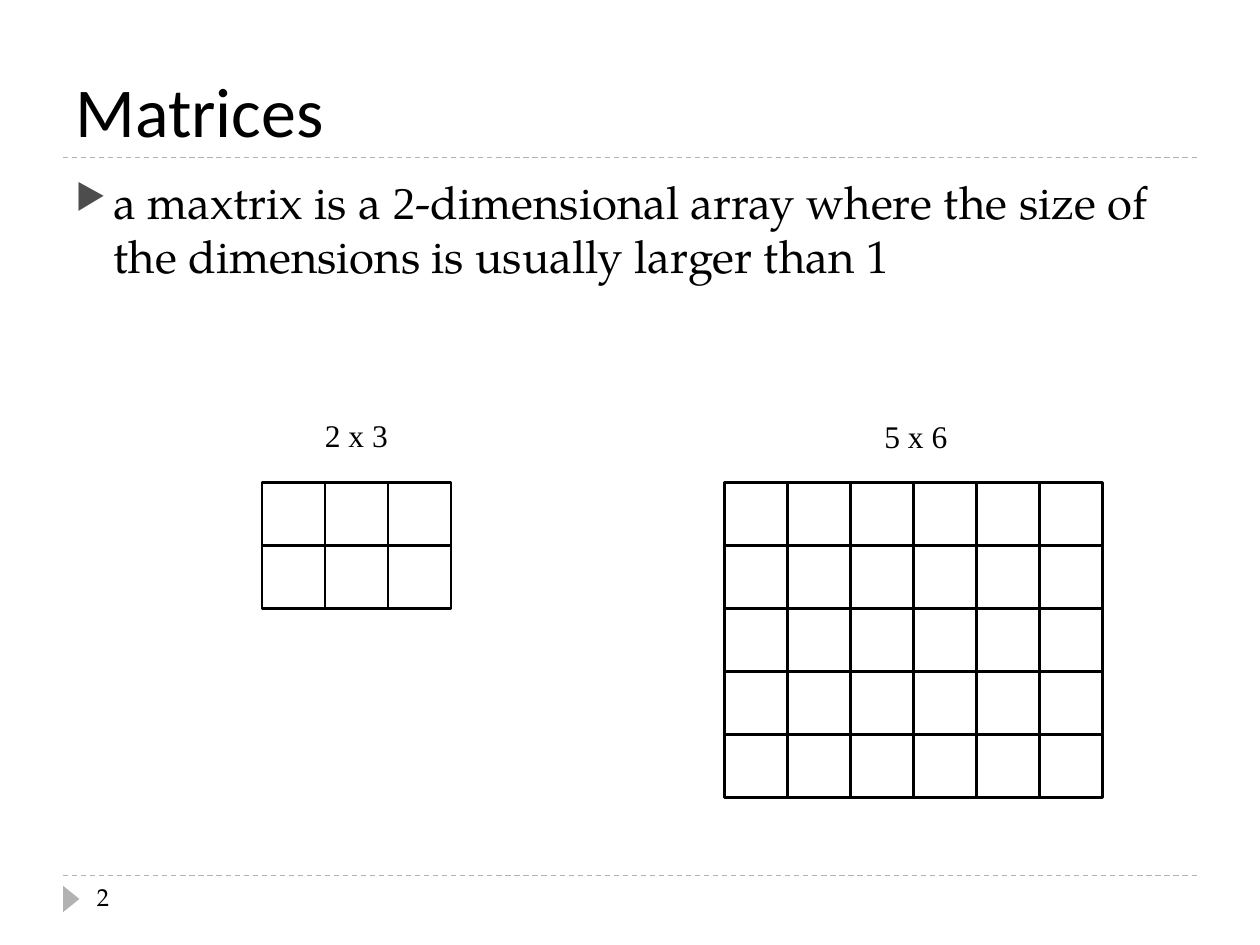
from dataclasses import dataclass

from lxml.etree import SubElement
from pptx import Presentation
from pptx.dml.color import RGBColor
from pptx.enum.dml import MSO_LINE
from pptx.enum.shapes import MSO_CONNECTOR, MSO_SHAPE
from pptx.enum.text import MSO_ANCHOR, PP_ALIGN
from pptx.oxml.ns import qn
from pptx.util import Inches, Pt


@dataclass(frozen=True)
class Theme:
    ink: str = "000000"
    paper: str = "FFFFFF"
    rule: str = "B2B2B2"
    bullet: str = "4D4D4D"
    title_font: str = "Calibri"
    body_font: str = "TeX Gyre Pagella"
    label_font: str = "Times New Roman"
    title_size: int = 40
    body_size: int = 26
    label_size: int = 18
    number_size: int = 14


class SlideBuilder:
    def __init__(self, slide, theme):
        self.slide = slide
        self.theme = theme

    def add_run(self, paragraph, text, font, size):
        run = paragraph.add_run()
        run.text = text
        run.font.name = font
        run.font.size = Pt(size)
        run.font.color.rgb = RGBColor.from_string(self.theme.ink)

    def title(self, text, left, top, width, height):
        heading = self.slide.shapes.title
        heading.left, heading.top = Inches(left), Inches(top)
        heading.width, heading.height = Inches(width), Inches(height)
        heading.text_frame.vertical_anchor = MSO_ANCHOR.BOTTOM
        paragraph = heading.text_frame.paragraphs[0]
        paragraph.alignment = PP_ALIGN.LEFT
        self.add_run(paragraph, text, self.theme.title_font, self.theme.title_size)

    def text(self, runs, size, left, top, width, height, wrap=True):
        """Add a one-paragraph box from (text, font) runs; return the paragraph."""
        box = self.slide.shapes.add_textbox(
            Inches(left), Inches(top), Inches(width), Inches(height))
        box.text_frame.word_wrap = wrap
        paragraph = box.text_frame.paragraphs[0]
        for content, font in runs:
            self.add_run(paragraph, content, font, size)
        return paragraph

    def bullet(self, paragraph, indent=0.3):
        paragraph.space_before = Pt(6)
        properties = paragraph._p.get_or_add_pPr()
        properties.set("marL", str(Inches(indent)))
        properties.set("indent", str(-Inches(indent)))
        color = SubElement(properties, qn("a:buClr"))
        SubElement(color, qn("a:srgbClr"), val=self.theme.bullet)
        SubElement(properties, qn("a:buSzPct"), val="76000")
        SubElement(properties, qn("a:buChar"), char="▶")

    def dashed_rule(self, y, left=0.5, right=9.5):
        rule = self.slide.shapes.add_connector(
            MSO_CONNECTOR.STRAIGHT, Inches(left), Inches(y), Inches(right), Inches(y))
        rule.line.color.rgb = RGBColor.from_string(self.theme.rule)
        rule.line.width = Pt(0.75)
        rule.line.dash_style = MSO_LINE.DASH
        SubElement(rule._element.spPr, qn("a:effectLst"))

    def shape(self, kind, fill, left, top, width, height):
        """Add a filled shape without outline or shadow."""
        shape = self.slide.shapes.add_shape(
            kind, Inches(left), Inches(top), Inches(width), Inches(height))
        shape.shadow.inherit = False
        shape.fill.solid()
        shape.fill.fore_color.rgb = RGBColor.from_string(fill)
        shape.line.fill.background()
        return shape

    def matrix(self, rows, columns, left, top, cell=0.5):
        for row in range(rows):
            for column in range(columns):
                square = self.shape(MSO_SHAPE.RECTANGLE, self.theme.paper,
                                    left + column * cell, top + row * cell, cell, cell)
                square.line.color.rgb = RGBColor.from_string(self.theme.ink)
                square.line.width = Pt(1.5)


def main():
    presentation = Presentation()
    presentation.slide_width, presentation.slide_height = Inches(10), Inches(7.5)
    title_only = presentation.slide_layouts[5]
    theme = Theme()
    builder = SlideBuilder(presentation.slides.add_slide(title_only), theme)

    for y in (6.95, 1.25):
        builder.dashed_rule(y)
    page_marker = builder.shape(
        MSO_SHAPE.ISOSCELES_TRIANGLE, theme.rule, 0.46, 7.07, 0.21, 0.13)
    page_marker.rotation = 90

    builder.title("Matrices", 0.5, 0.17, 9, 1.08)
    definition = builder.text(
        [("a maxtrix is a ", theme.body_font),
         ("2", theme.label_font),
         ("-dimensional array where the size of the dimensions is usually larger than 1",
          theme.body_font)],
        theme.body_size, 0.5, 1.33, 9, 5.4)
    builder.bullet(definition)
    builder.text([("2", theme.body_font)], theme.number_size, 0.67, 6.95, 2.17, 0.4)

    for rows, columns, left, label_left, label_top in (
            (2, 3, 2.08, 2.48, 3.25), (5, 6, 5.75, 6.92, 3.26)):
        builder.matrix(rows, columns, left, 3.83)
        builder.text([(f"{rows} x {columns}", theme.label_font)], theme.label_size,
                     label_left, label_top, 0.71, 0.4, wrap=False)

    presentation.save("out.pptx")


if __name__ == "__main__":
    main()
